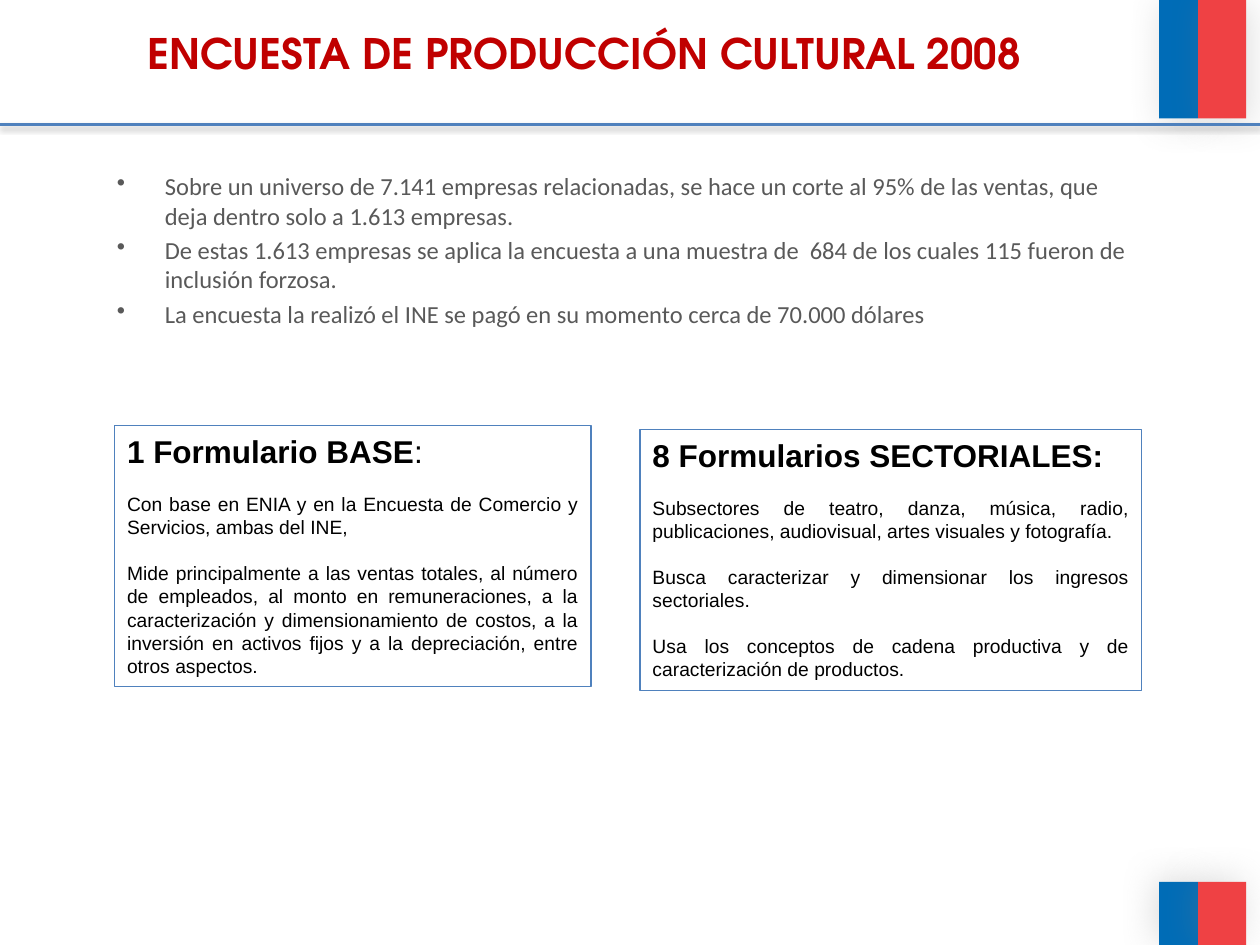
import pptx
import pptx.util
import pptx.dml.color
import pptx.enum.text
import pptx.enum.shapes
import pptx.oxml
import pptx.oxml.ns
from dataclasses import dataclass

Inches = pptx.util.Inches
Pt = pptx.util.Pt
Align = pptx.enum.text.PP_ALIGN
Anchor = pptx.enum.text.MSO_ANCHOR


@dataclass(frozen=True)
class Theme:
    blue: str = "006CB7"
    red: str = "EF4144"
    line: str = "4F81BD"
    title: str = "C00000"
    grey: str = "595959"
    black: str = "000000"
    shade: str = "808080"
    title_font: str = "TeX Gyre Adventor"
    list_font: str = "Calibri"
    box_font: str = "Arial"
    title_size: float = 24
    list_size: float = 14
    head_size: float = 18
    text_size: float = 11
    gap: float = 13


def color(code):
    return pptx.dml.color.RGBColor.from_string(code)


class Deck:
    def __init__(self, theme):
        self.theme = theme
        self.show = pptx.Presentation()
        self.show.slide_width, self.show.slide_height = Inches(10), Inches(7.5)
        self.slide = self.show.slides.add_slide(self.show.slide_layouts[5])

    def style(self, para, font, size, code, bold=False):
        for run in para.runs:
            run.font.name = font
            run.font.size = Pt(size)
            run.font.bold = bold
            run.font.color.rgb = color(code)

    def shadow(self, shape, alpha, blur, dist, angle):
        """Give an outer shadow: alpha in percent, lengths in points, angle in degrees."""
        space = pptx.oxml.ns.nsdecls("a")
        shape._element.spPr.append(pptx.oxml.parse_xml(
            f'<a:effectLst {space}><a:outerShdw blurRad="{Pt(blur)}" dist="{Pt(dist)}" '
            f'dir="{angle * 60000}" algn="ctr" rotWithShape="0">'
            f'<a:srgbClr val="{self.theme.shade}"><a:alpha val="{alpha * 1000}"/>'
            '</a:srgbClr></a:outerShdw></a:effectLst>'))

    def block(self, left, top, width, height, fill, angle):
        shape = self.slide.shapes.add_shape(
            pptx.enum.shapes.MSO_SHAPE.RECTANGLE,
            Inches(left), Inches(top), Inches(width), Inches(height))
        shape.fill.solid()
        shape.fill.fore_color.rgb = color(fill)
        shape.line.fill.background()
        self.shadow(shape, 25, 20, 3, angle)

    def flag(self, top, height, angle):
        self.block(9.2, top, 0.31, height, self.theme.blue, angle)
        self.block(9.51, top, 0.38, height, self.theme.red, angle)

    def rule(self, top):
        line = self.slide.shapes.add_connector(
            pptx.enum.shapes.MSO_CONNECTOR.STRAIGHT,
            Inches(0), Inches(top), Inches(10), Inches(top))
        line.line.color.rgb = color(self.theme.line)
        line.line.width = Pt(2)
        self.shadow(line, 38, 3.1, 1.6, 90)

    def title(self, text, left, top, width, height):
        shape = self.slide.shapes.title
        shape.left, shape.top = Inches(left), Inches(top)
        shape.width, shape.height = Inches(width), Inches(height)
        frame = shape.text_frame
        frame.text = text
        frame.word_wrap = True
        frame.vertical_anchor = Anchor.TOP
        para = frame.paragraphs[0]
        para.alignment = Align.CENTER
        look = self.theme
        self.style(para, look.title_font, look.title_size, look.title, True)

    def text(self, lines, left, top, width, height):
        shape = self.slide.shapes.add_textbox(
            Inches(left), Inches(top), Inches(width), Inches(height))
        shape.text_frame.word_wrap = True
        shape.text_frame.text = "\n".join(lines)
        return shape

    def bullets(self, lines, *place):
        shape = self.text(lines, *place)
        look = self.theme
        for rank, para in enumerate(shape.text_frame.paragraphs):
            props = para._p.get_or_add_pPr()
            props.set("marL", str(Inches(0.38)))
            props.set("indent", str(-Inches(0.38)))
            mark = pptx.oxml.parse_xml(
                f'<a:buChar {pptx.oxml.ns.nsdecls("a")} char="•"/>')
            props.append(mark)
            if rank:
                para.space_before = Pt(0.2 * look.list_size)
            self.style(para, look.list_font, look.list_size, look.grey)

    def panel(self, head, lines, *place, tail=""):
        """Draw an outlined box; tail is a part of the heading that is not bold."""
        shape = self.text([head, *lines], *place)
        look = self.theme
        shape.line.color.rgb = color(look.line)
        shape.line.width = Pt(0.75)
        first, *rest = shape.text_frame.paragraphs
        if tail:
            first.add_run().text = tail
        self.style(first, look.box_font, look.head_size, look.black, True)
        if tail:
            first.runs[-1].font.bold = False
        for para in rest:
            para.alignment = Align.JUSTIFY
            para.space_before = Pt(look.gap)
            self.style(para, look.box_font, look.text_size, look.black)
        shape.text_frame.auto_size = pptx.enum.text.MSO_AUTO_SIZE.SHAPE_TO_FIT_TEXT


def main():
    deck = Deck(Theme())
    deck.flag(0, 0.94, 45)
    deck.flag(7, 0.5, 215)
    deck.bullets([
        "Sobre un universo de 7.141 empresas relacionadas, se hace un corte al 95% "
        "de las ventas, que deja dentro solo a 1.613 empresas.",
        "De estas 1.613 empresas se aplica la encuesta a una muestra de  684 de los "
        "cuales 115 fueron de inclusión forzosa.",
        "La encuesta la realizó el INE se pagó en su momento cerca de 70.000 dólares",
    ], 0.83, 1.31, 8.28, 1.65)
    deck.rule(0.99)
    deck.title("ENCUESTA DE PRODUCCIÓN CULTURAL 2008", 0.17, 0.17, 8.93, 1.25)
    deck.panel("1 Formulario BASE", [
        "Con base en ENIA y en la Encuesta de Comercio y Servicios, ambas del INE,",
        "Mide principalmente a las ventas totales, al número de empleados, al monto "
        "en remuneraciones, a la caracterización y dimensionamiento de costos, a la "
        "inversión en activos fijos y a la depreciación, entre otros aspectos.",
    ], 0.91, 3.38, 3.78, 2.07, tail=":")
    deck.panel("8 Formularios SECTORIALES:", [
        "Subsectores de teatro, danza, música, radio, publicaciones, audiovisual, "
        "artes visuales y fotografía.",
        "Busca caracterizar y dimensionar los ingresos sectoriales.",
        "Usa los conceptos de cadena productiva y de caracterización de productos.",
    ], 5.08, 3.41, 3.98, 2.07)
    deck.show.save("out.pptx")


if __name__ == "__main__":
    main()
